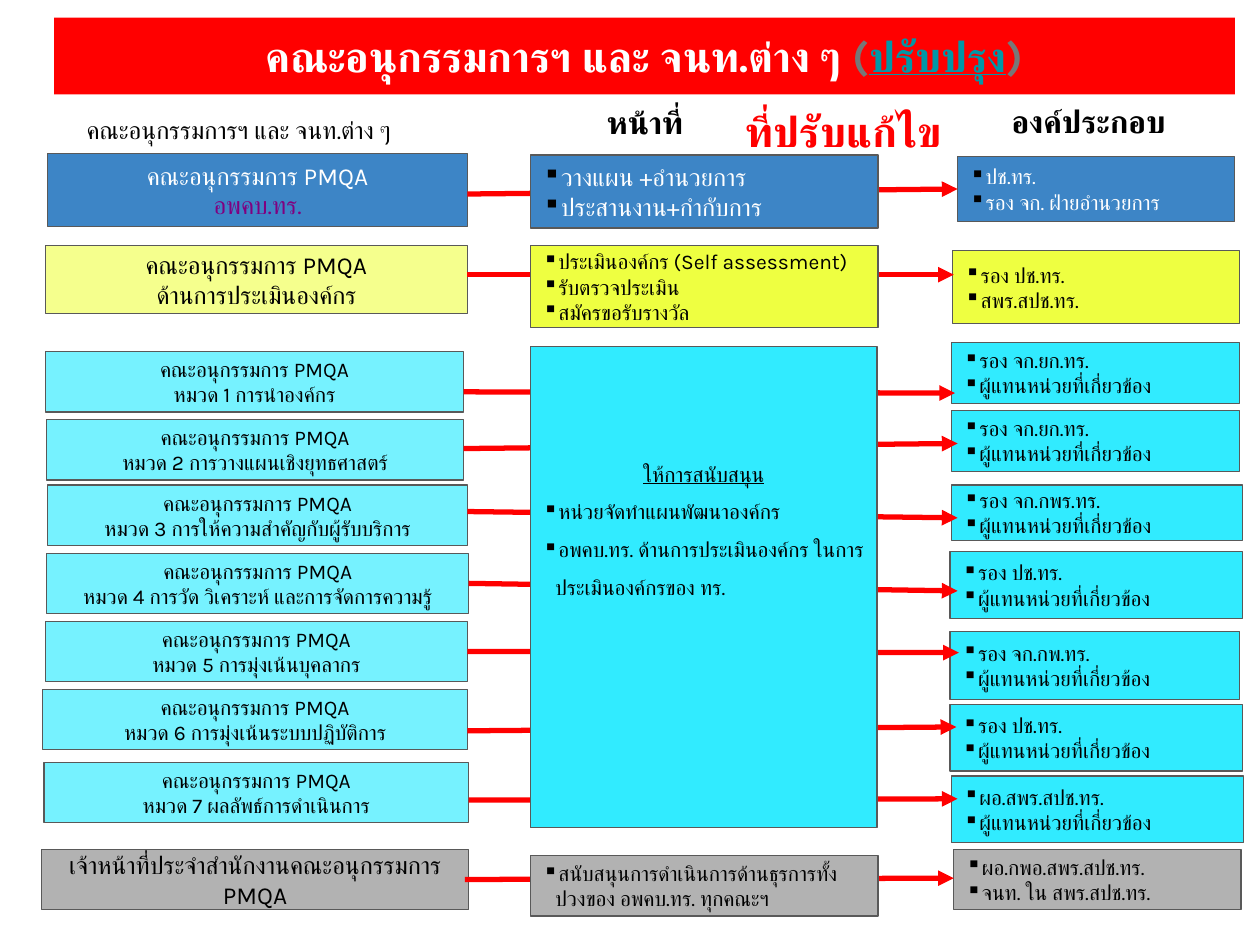
import pptx
import pptx.util
import pptx.dml.color
import pptx.enum.shapes
import pptx.enum.text
import pptx.oxml.ns
from lxml import etree

Inches, Pt = pptx.util.Inches, pptx.util.Pt
RGBColor = pptx.dml.color.RGBColor
ALIGN, ANCHOR = pptx.enum.text.PP_ALIGN, pptx.enum.text.MSO_ANCHOR
qn = pptx.oxml.ns.qn

FONT = "Karla"
BLACK = RGBColor(0x00, 0x00, 0x00)
WHITE = RGBColor(0xFF, 0xFF, 0xFF)
RED = RGBColor(0xFF, 0x00, 0x00)
GREY = RGBColor(0x77, 0x77, 0x77)
TEAL = RGBColor(0x00, 0x97, 0xA7)
PURPLE = RGBColor(0x80, 0x00, 0x80)
OUTLINE = RGBColor(0x59, 0x59, 0x59)
BLUE = RGBColor(0x3D, 0x85, 0xC6)
YELLOW = RGBColor(0xEE, 0xFF, 0x41)
PALE_YELLOW = RGBColor(0xF5, 0xFF, 0x8D)
CYAN = RGBColor(0x31, 0xEB, 0xFF)
PALE_CYAN = RGBColor(0x76, 0xF2, 0xFF)
SILVER = RGBColor(0xB2, 0xB2, 0xB2)

prs = pptx.Presentation()
prs.slide_width, prs.slide_height = Inches(10), Inches(7.5)
s = prs.slides.add_slide(prs.slide_layouts[5])


def add_run(p, text, size=12, color=BLACK, bold=False, underline=False):
    r = p.add_run()
    r.text = text
    r.font.name, r.font.size = FONT, Pt(size)
    r.font.bold, r.font.underline = bold, underline
    r.font.color.rgb = color
    # Thai letters take the complex-script font
    etree.SubElement(r.font._element, qn("a:cs"), typeface=FONT)


def add_box(at, lines, fill=None, bullets=False, anchor=ANCHOR.MIDDLE,
            left=0, indent=-0.1, spacing=None, bottom=0.1, **style):
    """Each line is a text, or a text with a dict of overriding run styles."""
    at = [Inches(v) for v in at]
    if fill is None:
        sp = s.shapes.add_textbox(*at)
    else:
        sp = s.shapes.add_shape(pptx.enum.shapes.MSO_SHAPE.RECTANGLE, *at)
        sp.shadow.inherit = False
        sp.fill.solid()
        sp.fill.fore_color.rgb = fill
        sp.line.color.rgb, sp.line.width = OUTLINE, Pt(0.75)
    tf = sp.text_frame
    tf.word_wrap, tf.vertical_anchor = True, anchor
    tf.margin_left = tf.margin_right = tf.margin_top = Inches(0.1)
    tf.margin_bottom = Inches(bottom)
    for i, line in enumerate(lines):
        text, extra = (line, {}) if isinstance(line, str) else line
        extra = dict(extra)
        bullet = extra.pop("bullet", bullets)
        p = tf.paragraphs[0] if i == 0 else tf.add_paragraph()
        p.alignment = ALIGN.LEFT if bullet else ALIGN.CENTER
        p.line_spacing = spacing
        pPr = p._p.get_or_add_pPr()
        pPr.set("marL", str(Inches(0.1 if bullet else left)))
        pPr.set("indent", str(Inches(-0.19 if bullet else indent)))
        if bullet:
            clr = etree.SubElement(pPr, qn("a:buClr"))
            etree.SubElement(clr, qn("a:srgbClr"), val=str(BLACK))
            etree.SubElement(pPr, qn("a:buChar"), char="▪")
        add_run(p, text, **{**style, **extra})


# Title
title = s.shapes.title
title.left, title.top = Inches(0.43), Inches(0.14)
title.width, title.height = Inches(9.37), Inches(0.61)
title.fill.solid()
title.fill.fore_color.rgb = RED
tf = title.text_frame
tf.auto_size = pptx.enum.text.MSO_AUTO_SIZE.NONE
tf.vertical_anchor = ANCHOR.TOP
tf.margin_left = tf.margin_right = tf.margin_top = tf.margin_bottom = Inches(0.1)
p = tf.paragraphs[0]
p.alignment = ALIGN.CENTER
p._p.get_or_add_pPr().set("indent", str(Inches(-0.19)))
for text, color in [("คณะอนุกรรมการฯ และ จนท.ต่าง ๆ ", WHITE), ("(", GREY),
                    ("ปรับปรุง", TEAL), (")", GREY)]:
    add_run(p, text, size=24, color=color, bold=True, underline=color == TEAL)

# Column headings
add_box((0.33, 0.81, 3.13, 0.36), ["คณะอนุกรรมการฯ และ จนท.ต่าง ๆ"],
        anchor=ANCHOR.TOP, size=14)
add_box((4.06, 0.72, 2.12, 0.57), ["หน้าที่"], anchor=ANCHOR.TOP, size=18, bold=True)
add_box((7.58, 0.71, 2.12, 0.57), ["องค์ประกอบ"], anchor=ANCHOR.TOP, size=18, bold=True)
add_box((5.12, 0.74, 2.77, 0.55), ["ที่ปรับแก้ไข"], left=0.38, indent=0,
        spacing=1.1, size=24, color=RED, bold=True)

# Left column: committees
TEAM = "คณะอนุกรรมการ PMQA"
add_box((0.38, 1.22, 3.33, 0.58), [TEAM, ("อพคบ.ทร.", {"color": PURPLE})],
        BLUE, size=14, color=WHITE)
add_box((0.36, 1.95, 3.35, 0.54), [TEAM, "ด้านการประเมินองค์กร"], PALE_YELLOW, size=14)
categories = [
    ((0.36, 2.79, 3.32), "การนำองค์กร"),
    ((0.37, 3.33, 3.31), "การวางแผนเชิงยุทธศาสตร์"),
    ((0.38, 3.85, 3.33), "การให้ความสำคัญกับผู้รับบริการ"),
    ((0.37, 4.39, 3.35), "การวัด วิเคราะห์ และการจัดการความรู้"),
    ((0.36, 4.93, 3.35), "การมุ่งเน้นบุคลากร"),
    ((0.34, 5.47, 3.37), "การมุ่งเน้นระบบปฏิบัติการ"),
    ((0.35, 6.05, 3.37), "ผลลัพธ์การดำเนินการ"),
]
for n, (at, name) in enumerate(categories, 1):
    add_box((*at, 0.48), [TEAM, f"หมวด {n} {name}"], PALE_CYAN)
add_box((0.33, 6.74, 3.39, 0.48), ["เจ้าหน้าที่ประจำสำนักงานคณะอนุกรรมการ PMQA"],
        SILVER, size=14)

# Right column: members
add_box((7.6, 1.24, 2.2, 0.52), ["ปช.ทร.", "รอง จก. ฝ่ายอำนวยการ"], BLUE,
        bullets=True, color=WHITE)
add_box((7.56, 1.99, 2.28, 0.58), ["รอง ปช.ทร.", "สพร.สปช.ทร."], YELLOW, bullets=True)
members = [
    ((7.55, 2.72, 2.29, 0.48), "รอง จก.ยก.ทร."),
    ((7.55, 3.26, 2.29, 0.48), "รอง จก.ยก.ทร."),
    ((7.55, 3.85, 2.31, 0.44), "รอง จก.กพร.ทร."),
    ((7.54, 4.38, 2.32, 0.53), "รอง ปช.ทร."),
    ((7.54, 5.01, 2.3, 0.54), "รอง จก.กพ.ทร."),
    ((7.54, 5.59, 2.32, 0.53), "รอง ปช.ทร."),
    ((7.55, 6.16, 2.32, 0.53), "ผอ.สพร.สปช.ทร."),
]
for at, head in members:
    add_box(at, [head, "ผู้แทนหน่วยที่เกี่ยวข้อง"], CYAN, bullets=True)
add_box((7.57, 6.74, 2.28, 0.48), ["ผอ.กพอ.สพร.สปช.ทร.", "จนท. ใน สพร.สปช.ทร."],
        SILVER, bullets=True)

# Arrows from committee to members, passing behind the duties
arrows = [
    (3.71, 1.54, 7.6, 1.5), (3.71, 2.18, 7.57, 2.18), (3.68, 3.11, 7.58, 3.12),
    (3.68, 3.56, 7.6, 3.52), (3.71, 4.06, 7.6, 4.11), (3.72, 4.63, 7.6, 4.69),
    (3.71, 5.17, 7.61, 5.18), (3.71, 5.8, 7.59, 5.77), (3.72, 6.35, 7.6, 6.34),
    (3.69, 6.98, 7.57, 6.97),
]
for ends in arrows:
    c = s.shapes.add_connector(pptx.enum.shapes.MSO_CONNECTOR.STRAIGHT,
                               *[Inches(v) for v in ends])
    c.line.color.rgb, c.line.width = RED, Pt(3)
    etree.SubElement(c.line._get_or_add_ln(), qn("a:tailEnd"), type="triangle")
    etree.SubElement(c._element.spPr, qn("a:effectLst"))

# Middle column: duties
add_box((4.21, 1.23, 2.76, 0.58), ["วางแผน +อำนวยการ", "ประสานงาน+กำกับการ"], BLUE,
        bullets=True, size=14, color=WHITE)
add_box((4.21, 1.95, 2.76, 0.65),
        ["ประเมินองค์กร (Self assessment)", "รับตรวจประเมิน", "สมัครขอรับรางวัล"],
        YELLOW, bullets=True)
add_box((4.21, 2.75, 2.75, 3.82),
        [("ให้การสนับสนุน", {"underline": True, "bullet": False}),
         "หน่วยจัดทำแผนพัฒนาองค์กร",
         "อพคบ.ทร. ด้านการประเมินองค์กร ในการประเมินองค์กรของ ทร."],
        CYAN, bullets=True, indent=0, spacing=1.5, bottom=1.1)
add_box((4.21, 6.79, 2.76, 0.48),
        ["สนับสนุนการดำเนินการด้านธุรการทั้งปวงของ อพคบ.ทร. ทุกคณะฯ"],
        SILVER, bullets=True)

prs.save("out.pptx")
